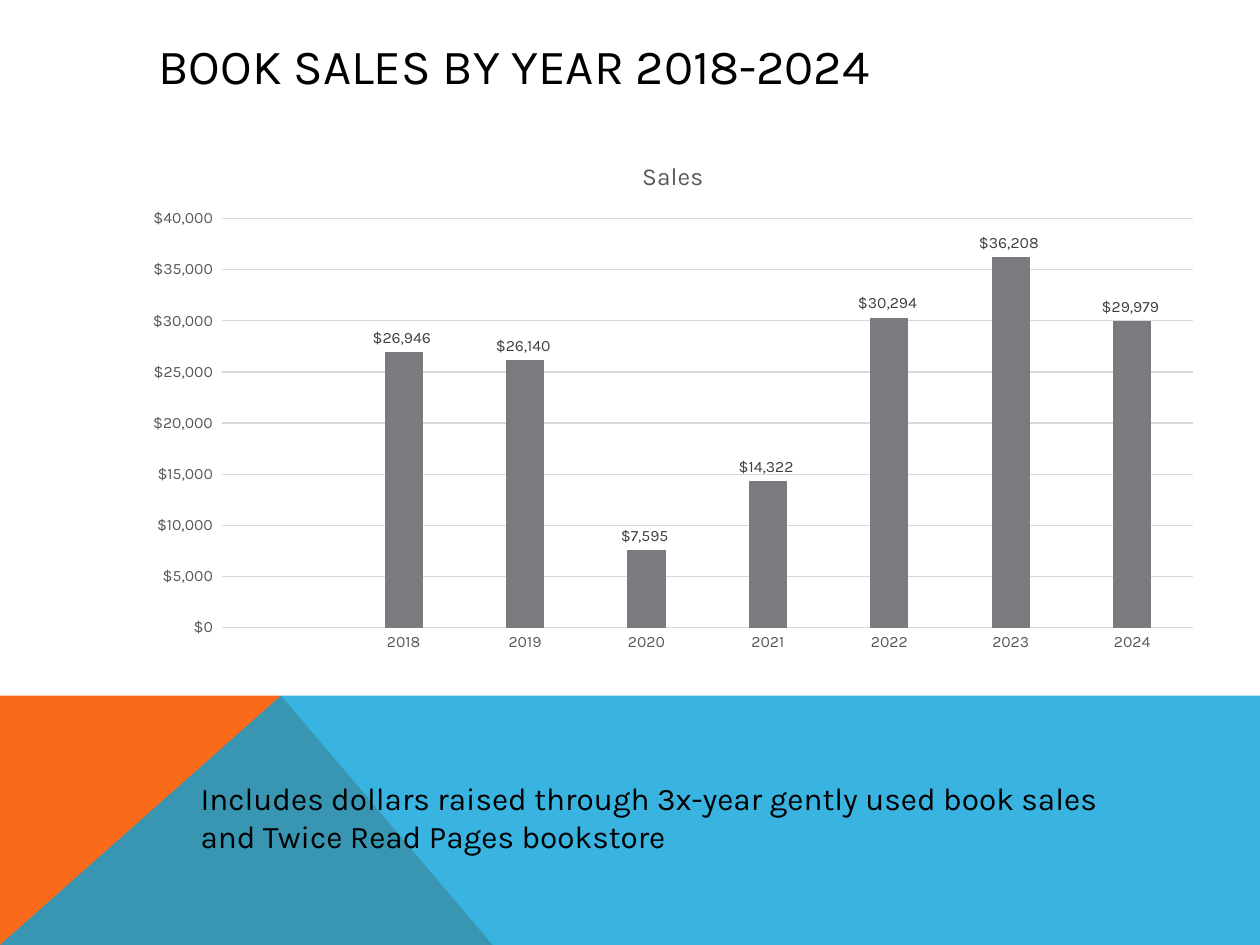
import lxml.etree
import pptx
import pptx.chart.data
import pptx.dml.color
import pptx.enum.chart
import pptx.enum.text
import pptx.oxml.ns
import pptx.util

Pt = pptx.util.Pt
qn = pptx.oxml.ns.qn
COLORS = {
    "black": "000000", "orange": "F96A1B", "blue": "08A1D9", "bar": "797B7E",
    "grid": "D9D9D9", "label": "404040", "axis": "595959",
}
SALES = {
    "": None, "2018": 26946, "2019": 26140, "2020": 7595, "2021": 14322,
    "2022": 30294, "2023": 36208, "2024": 29979,
}
MONEY = '"$"#,##0_);[Red]\\("$"#,##0\\)'


class Deck:
    """Holds the text style and the current slide."""

    def __init__(self, slide, face="Karla"):
        self.slide = slide
        self.face = face

    def color(self, name):
        return pptx.dml.color.RGBColor.from_string(COLORS[name])

    def font(self, font, size, color):
        font.name = self.face
        font.size = Pt(size)
        font.bold = False
        font.color.rgb = self.color(color)

    def line(self, line, color):
        line.color.rgb = self.color(color)
        line.width = Pt(0.75)

    def shape(self, points, color, alpha=None):
        """Draw a closed outline; alpha is its opacity in percent."""
        start, *rest = [(Pt(x), Pt(y)) for x, y in points]
        build = self.slide.shapes.build_freeform(*start)
        build.add_line_segments(rest, close=True)
        shape = build.convert_to_shape()
        shape.shadow.inherit = False
        shape.line.fill.background()
        shape.fill.solid()
        shape.fill.fore_color.rgb = self.color(color)
        if alpha is not None:
            fill = shape.element.spPr.find(qn("a:solidFill"))
            node = lxml.etree.SubElement(fill[0], qn("a:alpha"))
            node.set("val", str(alpha * 1000))

    def text(self, box, words, size):
        frame = self.slide.shapes.add_textbox(*map(Pt, box)).text_frame
        frame.word_wrap = True
        frame.auto_size = pptx.enum.text.MSO_AUTO_SIZE.SHAPE_TO_FIT_TEXT
        run = frame.paragraphs[0].add_run()
        run.text = words
        self.font(run.font, size, "black")

    def chart(self, box, title, values):
        data = pptx.chart.data.CategoryChartData(number_format=MONEY)
        data.categories = list(values)
        data.add_series(title, list(values.values()))
        kind = pptx.enum.chart.XL_CHART_TYPE.COLUMN_CLUSTERED
        chart = self.slide.shapes.add_chart(kind, *map(Pt, box), data).chart
        self.font(chart.font, 10, "black")
        chart.has_legend = False
        chart.has_title = True
        run = chart.chart_title.text_frame.paragraphs[0].add_run()
        run.text = title
        self.font(run.font, 14, "axis")

        for axis in (chart.category_axis, chart.value_axis):
            axis.major_tick_mark = pptx.enum.chart.XL_TICK_MARK.NONE
            axis.minor_tick_mark = pptx.enum.chart.XL_TICK_MARK.NONE
            self.font(axis.tick_labels.font, 9, "axis")
        self.line(chart.category_axis.format.line, "grid")
        scale = chart.value_axis
        scale.minimum_scale, scale.maximum_scale, scale.major_unit = 0, 40000, 5000
        scale.format.line.fill.background()
        self.line(scale.major_gridlines.format.line, "grid")
        scale.tick_labels.number_format = MONEY
        scale.tick_labels.number_format_is_linked = False

        plot = chart.plots[0]
        plot.gap_width = 219
        plot.overlap = -27
        plot.vary_by_categories = False
        bars = plot.series[0]
        bars.format.fill.solid()
        bars.format.fill.fore_color.rgb = self.color("bar")
        labels = bars.data_labels
        labels.show_value = True
        labels.position = pptx.enum.chart.XL_LABEL_POSITION.OUTSIDE_END
        labels.number_format = MONEY
        labels.number_format_is_linked = False
        self.font(labels.font, 9, "label")


def main():
    show = pptx.Presentation()
    wide, high = 720, 540
    show.slide_width, show.slide_height = Pt(wide), Pt(high)
    deck = Deck(show.slides.add_slide(show.slide_layouts[6]))

    top, peak = 397.5, 160.6
    deck.shape([(0, high), (0, top), (peak, top), (281.5, high)], "orange")
    deck.shape([(0, high), (peak, top), (wide, top), (wide, high)], "blue", 80)
    deck.chart((75, 79, 619, 299), "Sales", SALES)
    deck.text((83.5, 16.5, 600.5, 41), "BOOK SALES BY YEAR 2018-2024", 28)
    deck.text(
        (107.5, 441.5, 552, 51),
        "Includes dollars raised through 3x-year gently used book sales "
        "and Twice Read Pages bookstore",
        18,
    )
    show.save("out.pptx")


if __name__ == "__main__":
    main()
